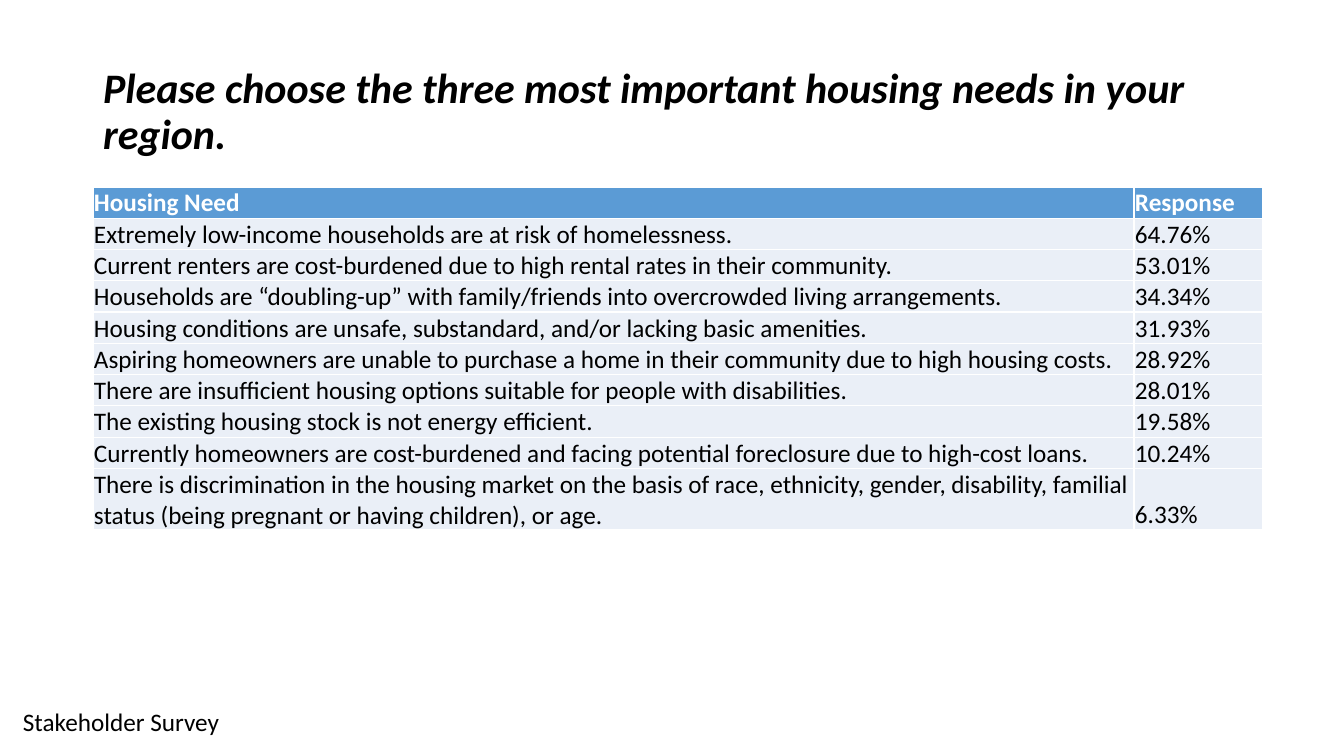
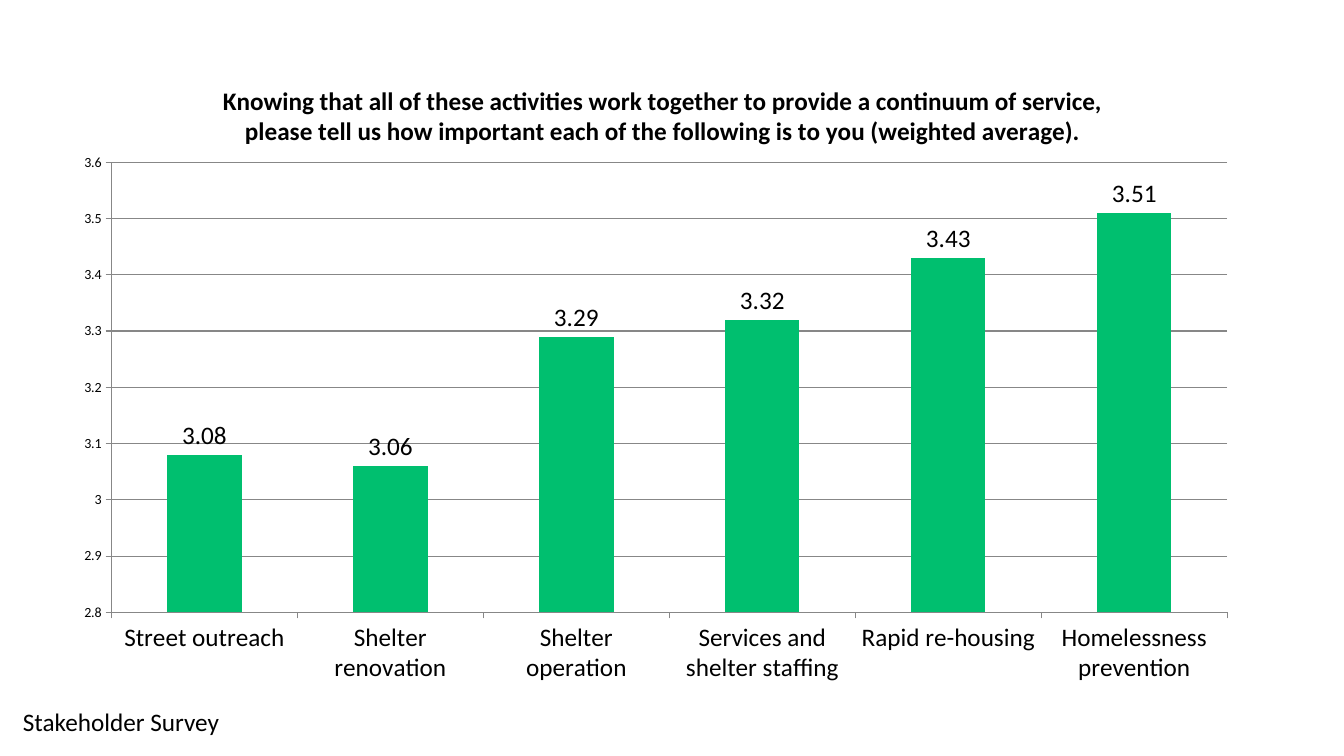
from lxml.etree import SubElement
from pptx import Presentation
from pptx.chart.data import CategoryChartData
from pptx.dml.color import RGBColor
from pptx.enum.chart import XL_CHART_TYPE as ChartType, XL_LABEL_POSITION as LabelPosition, XL_TICK_MARK as TickMark
from pptx.enum.text import MSO_ANCHOR as Anchor, MSO_AUTO_SIZE as AutoSize, PP_ALIGN as Align
from pptx.oxml import parse_xml
from pptx.oxml.ns import nsdecls, qn
from pptx.util import Emu, Pt

FONT = "Calibri"
BLACK, WHITE = "000000", "FFFFFF"
HEADER_BLUE, ROW_BLUE = "5B9BD5", "EAEFF7"
BAR_GREEN, GRID_GREY = "00BF6F", "878787"
PX_PER_INCH = 100.8
TITLE_ONLY, BLANK = 5, 6

FOOTER = "Stakeholder Survey"
NEEDS_QUESTION = "Please choose the three most important housing needs in your region."
NEEDS_HEADER = ("Housing Need", "Response")
NEEDS = [
    ("Extremely low-income households are at risk of homelessness.", "64.76%"),
    ("Current renters are cost-burdened due to high rental rates in their community.", "53.01%"),
    ("Households are “doubling-up” with family/friends into overcrowded living arrangements.", "34.34%"),
    ("Housing conditions are unsafe, substandard, and/or lacking basic amenities.", "31.93%"),
    ("Aspiring homeowners are unable to purchase a home in their community due to high housing costs.", "28.92%"),
    ("There are insufficient housing options suitable for people with disabilities.", "28.01%"),
    ("The existing housing stock is not energy efficient.", "19.58%"),
    ("Currently homeowners are cost-burdened and facing potential foreclosure due to high-cost loans.", "10.24%"),
    ("There is discrimination in the housing market on the basis of race, ethnicity, gender, disability, "
     "familial status (being pregnant or having children), or age.", "6.33%"),
]
ACTIVITIES_QUESTION = (
    "Knowing that all of these activities work together to provide a continuum of service, "
    "please tell us how important each of the following is to you (weighted average)."
)
ACTIVITIES = {
    "Street outreach": 3.08,
    "Shelter renovation": 3.06,
    "Shelter operation": 3.29,
    "Services and shelter staffing": 3.32,
    "Rapid re-housing": 3.43,
    "Homelessness prevention": 3.51,
}


def px(length):
    return Emu(round(length * 914400 / PX_PER_INCH))


def box(*lengths):
    return [px(length) for length in lengths]


def color(value):
    return RGBColor.from_string(value)


def style_font(font, size, ink=BLACK, bold=False, italic=False):
    font.name = FONT
    font.size = Pt(size)
    font.bold = bold
    font.italic = italic
    font.color.rgb = color(ink)


def add_run(paragraph, text, size, **style):
    run = paragraph.add_run()
    run.text = text
    style_font(run.font, size, **style)


def add_slide(deck, layout):
    slide = deck.slides.add_slide(deck.slide_layouts[layout])
    footer = slide.shapes.add_textbox(*box(13, 701, 219, 40)).text_frame
    footer.word_wrap = False
    footer.auto_size = AutoSize.SHAPE_TO_FIT_TEXT
    add_run(footer.paragraphs[0], FOOTER, 18)
    return slide


def set_title(slide, text):
    title = slide.shapes.title
    title.left, title.top, title.width, title.height = box(93, 40, 1182, 146)
    frame = title.text_frame
    frame.auto_size = AutoSize.NONE
    frame.vertical_anchor = Anchor.MIDDLE
    paragraph = frame.paragraphs[0]
    paragraph.alignment = Align.LEFT
    paragraph.line_spacing = 0.9
    add_run(paragraph, text, 30, bold=True, italic=True)


def add_borders(cell):
    properties = cell._tc.get_or_add_tcPr()
    for side in ("a:lnL", "a:lnR", "a:lnT", "a:lnB"):
        line = SubElement(properties, qn(side), w=str(Pt(1)))
        fill = SubElement(line, qn("a:solidFill"))
        SubElement(fill, qn("a:srgbClr"), val=WHITE)


def fill_cell(cell, text, fill, **style):
    add_borders(cell)
    cell.fill.solid()
    cell.fill.fore_color.rgb = color(fill)
    cell.vertical_anchor = Anchor.BOTTOM
    cell.margin_left = cell.margin_right = cell.margin_top = px(1)
    cell.margin_bottom = 0
    add_run(cell.text_frame.paragraphs[0], text, 18, **style)


def add_needs_table(slide):
    rows = [NEEDS_HEADER, *NEEDS]
    widths = (1041, 129)
    frame = slide.shapes.add_table(len(rows), len(widths), *box(93, 187, sum(widths), 21 * len(rows)))
    table = frame.table
    for column, width in zip(table.columns, widths):
        column.width = px(width)
    for row_number, row in enumerate(rows):
        for column_number, text in enumerate(row):
            cell = table.cell(row_number, column_number)
            if row_number == 0:
                fill_cell(cell, text, HEADER_BLUE, ink=WHITE, bold=True)
            else:
                fill_cell(cell, text, ROW_BLUE)


def manual_layout(target="", **fractions):
    modes = "".join(f'<c:{side}Mode val="edge"/>' for side in "xy")
    values = "".join(f'<c:{name} val="{value}"/>' for name, value in fractions.items())
    return parse_xml(
        f'<c:layout {nsdecls("c")}><c:manualLayout>{target}{modes}{values}</c:manualLayout></c:layout>'
    )


def set_layout(parent, layout, before):
    for previous in parent.findall(qn("c:layout")):
        parent.remove(previous)
    parent.find(qn(before)).addprevious(layout)


def style_axis(axis, size):
    axis.major_tick_mark = TickMark.OUTSIDE
    axis.minor_tick_mark = TickMark.NONE
    axis.format.line.color.rgb = color(GRID_GREY)
    style_font(axis.tick_labels.font, size)


def style_value_axis(axis):
    style_axis(axis, 10)
    axis.minimum_scale, axis.maximum_scale, axis.major_unit = 2.8, 3.6, 0.1
    axis.has_major_gridlines = True
    axis.major_gridlines.format.line.color.rgb = color(GRID_GREY)


def style_bars(plot):
    plot.gap_width = 150
    plot.vary_by_categories = False
    bars = plot.series[0].format.fill
    bars.solid()
    bars.fore_color.rgb = color(BAR_GREEN)
    plot.has_data_labels = True
    labels = plot.data_labels
    labels.show_value = True
    labels.position = LabelPosition.OUTSIDE_END
    style_font(labels.font, 18)


def add_activities_chart(slide):
    ratings = CategoryChartData()
    ratings.categories = list(ACTIVITIES)
    ratings.add_series("Series 1", list(ACTIVITIES.values()))
    frame = slide.shapes.add_chart(ChartType.COLUMN_CLUSTERED, *box(64, 53, 1187, 643), ratings)
    chart = frame.chart
    style_font(chart.font, 10)
    chart.has_legend = False
    chart.has_title = True
    add_run(chart.chart_title.text_frame.paragraphs[0], ACTIVITIES_QUESTION, 18, bold=True)
    style_axis(chart.category_axis, 18)
    style_value_axis(chart.value_axis)
    style_bars(chart.plots[0])
    set_layout(chart.chart_title._element, manual_layout(x=0.13, y=0.04), "c:overlay")
    plot_layout = manual_layout('<c:layoutTarget val="inner"/>', x=0.04, y=0.17, w=0.94, h=0.7)
    set_layout(chart._chartSpace.chart.plotArea, plot_layout, "c:barChart")


def main():
    deck = Presentation()
    deck.slide_width, deck.slide_height = box(1344, 756)

    needs_slide = add_slide(deck, TITLE_ONLY)
    set_title(needs_slide, NEEDS_QUESTION)
    add_needs_table(needs_slide)

    activities_slide = add_slide(deck, BLANK)
    add_activities_chart(activities_slide)

    deck.save("out.pptx")


if __name__ == "__main__":
    main()
